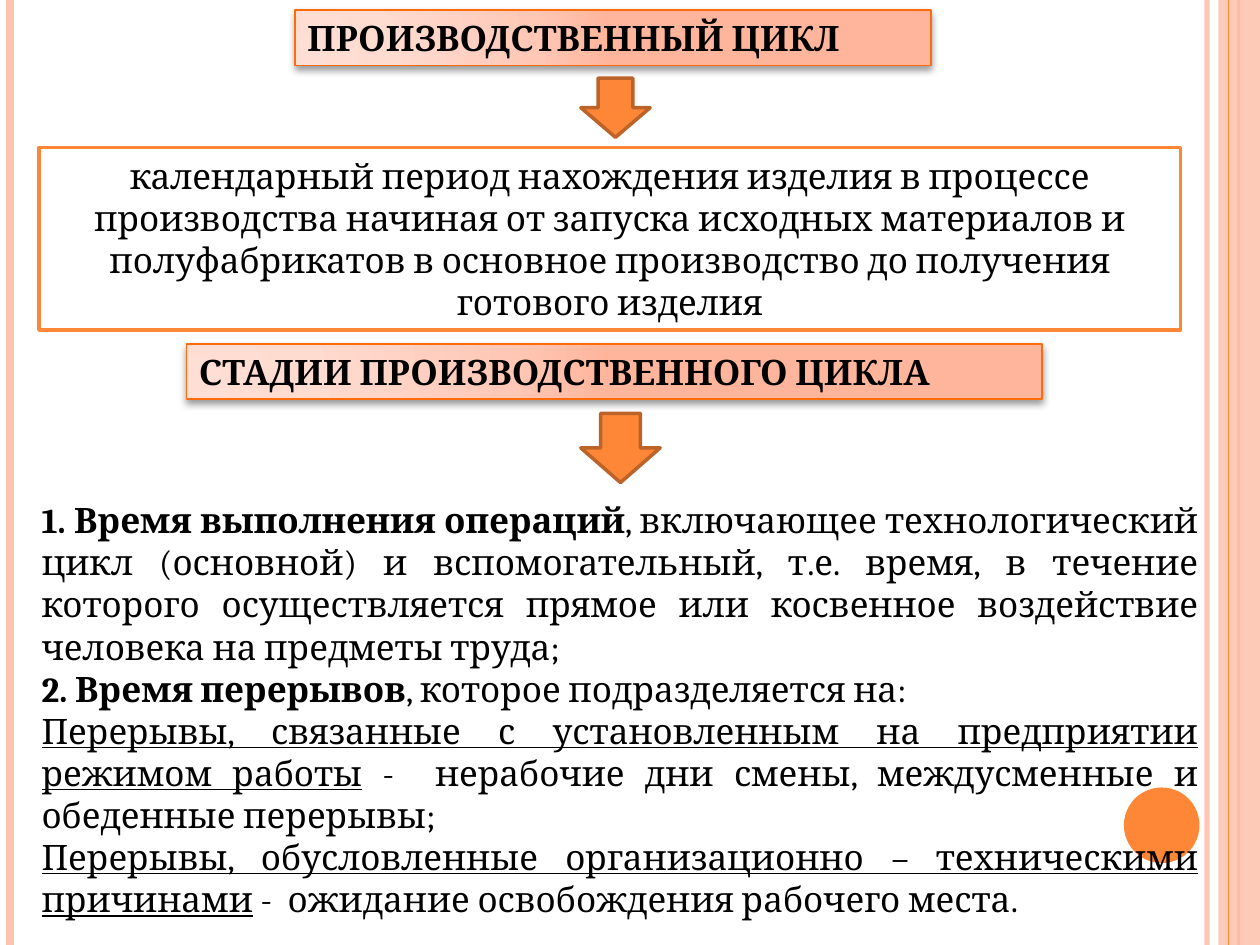
from lxml import etree
from pptx import Presentation
from pptx.dml.color import RGBColor
from pptx.enum.shapes import MSO_CONNECTOR, MSO_SHAPE
from pptx.enum.text import MSO_ANCHOR, MSO_AUTO_SIZE, PP_ALIGN
from pptx.oxml import parse_xml
from pptx.oxml.ns import nsdecls, qn
from pptx.util import Inches, Pt

ORANGE = RGBColor(0xFE, 0x86, 0x37)
PEACH = RGBColor(0xFE, 0xC3, 0xAE)
BROWN = RGBColor(0xBC, 0x63, 0x29)
EDGE = RGBColor(0xFF, 0x6B, 0x0A)
WHITE = RGBColor(0xFF, 0xFF, 0xFF)
BLACK = RGBColor(0, 0, 0)
GRADIENT = [(0, "FFDED5"), (30, "FFDBD0"), (75, "FFC8B6"), (100, "FFB59B")]
FONT = "Cambria"
W, H = 10, 7.5

TITLE = "ПРОИЗВОДСТВЕННЫЙ ЦИКЛ"
DEFINITION = (
    "календарный период нахождения изделия в процессе производства начиная от "
    "запуска исходных материалов и полуфабрикатов в основное производство до "
    "получения готового изделия"
)
STAGES_TITLE = "СТАДИИ ПРОИЗВОДСТВЕННОГО ЦИКЛА"
STAGES = [
    [("1. Время выполнения операций", "b"),
     (", включающее технологический цикл (основной) и вспомогательный, т.е. "
      "время, в течение которого осуществляется прямое или косвенное "
      "воздействие человека на предметы труда;", "")],
    [("2. Время перерывов", "b"), (", которое подразделяется на:", "")],
    [("Перерывы, связанные с установленным на предприятии режимом работы", "u"),
     (" -  нерабочие дни смены, междусменные и обеденные перерывы;", "")],
    [("Перерывы, обусловленные организационно – техническими причинами", "u"),
     (" -  ожидание освобождения рабочего места.", "")],
]
STRIPES = [(9.58, PEACH, 3, 93), (0.08, PEACH, 4.5, 100), (9.83, ORANGE, 1.5, 100)]
ARROWS = [(4.61, 0.62, 0.55, 0.47), (4.61, 3.28, 0.63, 0.55)]


def place(sp, box):
    sp.left, sp.top, sp.width, sp.height = map(Inches, box)


def set_alpha(sp, percent):
    color = next(sp._element.spPr.iter(qn("a:srgbClr")))
    etree.SubElement(color, qn("a:alpha")).set("val", str(percent * 1000))


def add_stripe(x, color, width, alpha=100):
    c = s.shapes.add_connector(
        MSO_CONNECTOR.STRAIGHT, Inches(x), 0, Inches(x), Inches(H))
    c.line.color.rgb = color
    c.line.width = Pt(width)
    etree.SubElement(c._element.spPr, qn("a:effectLst"))
    if alpha < 100:
        set_alpha(c, alpha)


def add_shape(kind, box, fill, line=None):
    sp = s.shapes.add_shape(kind, *map(Inches, box))
    sp.shadow.inherit = False
    sp.fill.solid()
    sp.fill.fore_color.rgb = fill
    if line is None:
        sp.line.fill.background()
    else:
        sp.line.color.rgb = line
        sp.line.width = Pt(2)
    return sp


def write(sp, paragraphs, align=PP_ALIGN.LEFT, anchor=MSO_ANCHOR.MIDDLE):
    tf = sp.text_frame
    tf.word_wrap = True
    tf.auto_size = MSO_AUTO_SIZE.NONE
    tf.vertical_anchor = anchor
    for i, runs in enumerate(paragraphs):
        p = tf.add_paragraph() if i else tf.paragraphs[0]
        p.alignment = align
        p.space_before = Pt(0)
        pPr = p._p.get_or_add_pPr()
        pPr.set("marL", "0")
        pPr.set("indent", "0")
        etree.SubElement(pPr, qn("a:buNone"))
        for text, style in runs:
            r = p.add_run()
            r.text = text
            r.font.name = FONT
            r.font.size = Pt(20)
            r.font.color.rgb = BLACK
            r.font.bold = style == "b"
            r.font.underline = style == "u"


def style_heading(sp, text):
    stops = "".join(
        f'<a:gs pos="{pos * 1000}"><a:srgbClr val="{c}"/></a:gs>' for pos, c in GRADIENT)
    spPr = sp._element.spPr
    spPr.append(parse_xml(
        f'<a:gradFill {nsdecls("a")} rotWithShape="1"><a:gsLst>{stops}</a:gsLst>'
        '<a:path path="circle"><a:fillToRect l="5000" t="100000" r="120000" b="10000"/>'
        '</a:path></a:gradFill>'))
    sp.line.color.rgb = EDGE
    sp.line.width = Pt(1)
    spPr.append(parse_xml(
        f'<a:effectLst {nsdecls("a")}><a:outerShdw blurRad="{Pt(4)}" dist="{Pt(2)}" '
        'dir="5400000" rotWithShape="0"><a:srgbClr val="000000"><a:alpha val="40000"/>'
        '</a:srgbClr></a:outerShdw></a:effectLst>'))
    write(sp, [[(text, "b")]])


prs = Presentation()
prs.slide_width, prs.slide_height = Inches(W), Inches(H)
s = prs.slides.add_slide(prs.slide_layouts[1])
title, body = s.shapes.title, s.placeholders[1]

for stripe in STRIPES:
    add_stripe(*stripe)
band = add_shape(MSO_SHAPE.RECTANGLE, (9.67, 0, 0.33, H), PEACH)
set_alpha(band, 87)
add_stripe(9.75, ORANGE, 0.75)
add_shape(MSO_SHAPE.OVAL, (8.92, 6.25, 0.6, 0.6), ORANGE)

place(title, (2.34, 0.08, 5.05, 0.44))
style_heading(title, TITLE)

definition = add_shape(MSO_SHAPE.RECTANGLE, (0.31, 1.17, 9.06, 1.45), WHITE, ORANGE)
write(definition, [[(DEFINITION, "")]], align=PP_ALIGN.CENTER)

stages = s.shapes.add_shape(
    MSO_SHAPE.RECTANGLE, *map(Inches, (1.48, 2.73, 6.79, 0.44)))
style_heading(stages, STAGES_TITLE)

for box in ARROWS:
    add_shape(MSO_SHAPE.DOWN_ARROW, box, ORANGE, BROWN)

place(body, (0.23, 3.91, 9.38, 3.47))
write(body, STAGES, align=PP_ALIGN.JUSTIFY, anchor=MSO_ANCHOR.TOP)
s.shapes._spTree.append(body._element)

prs.save("out.pptx")
